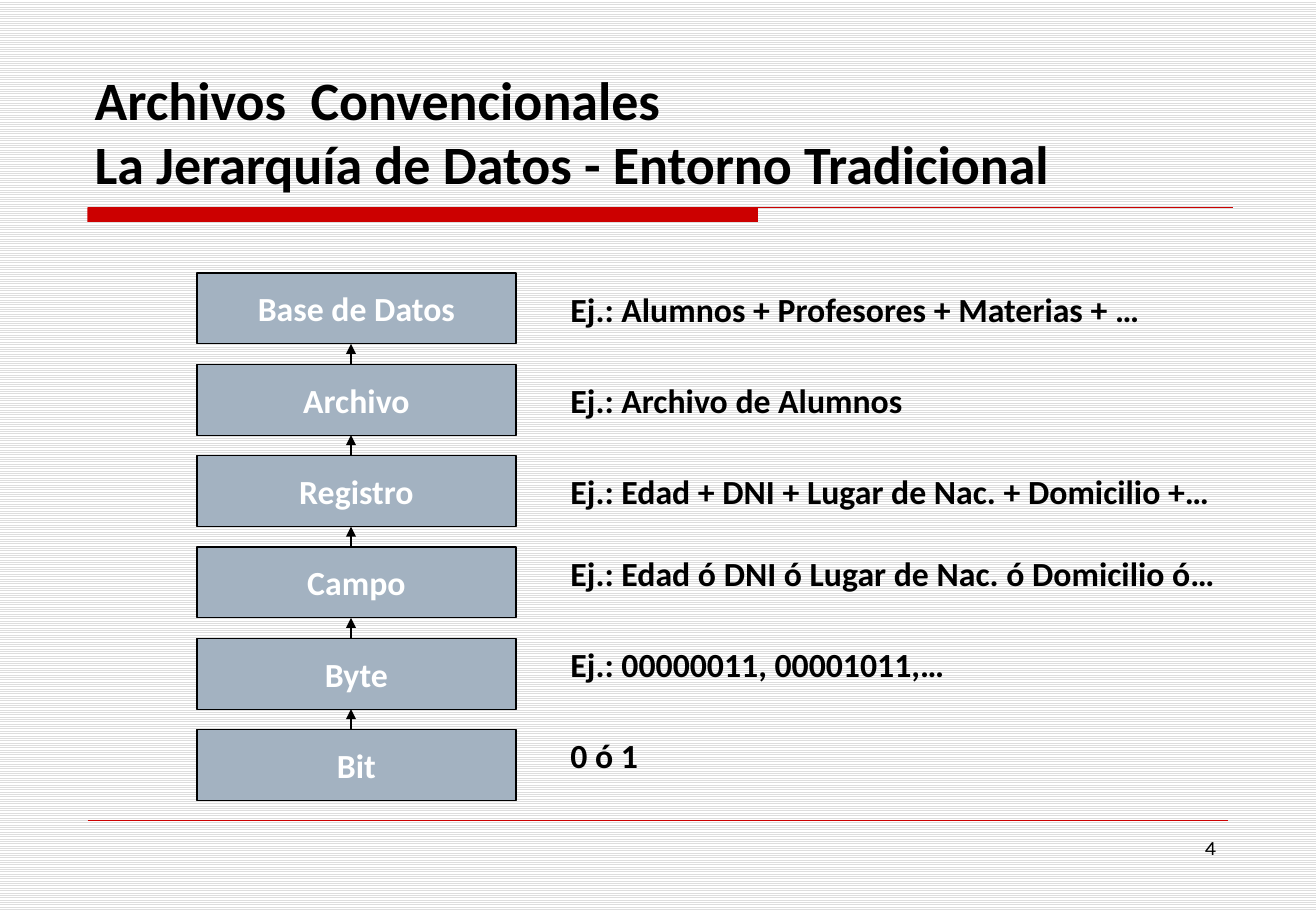
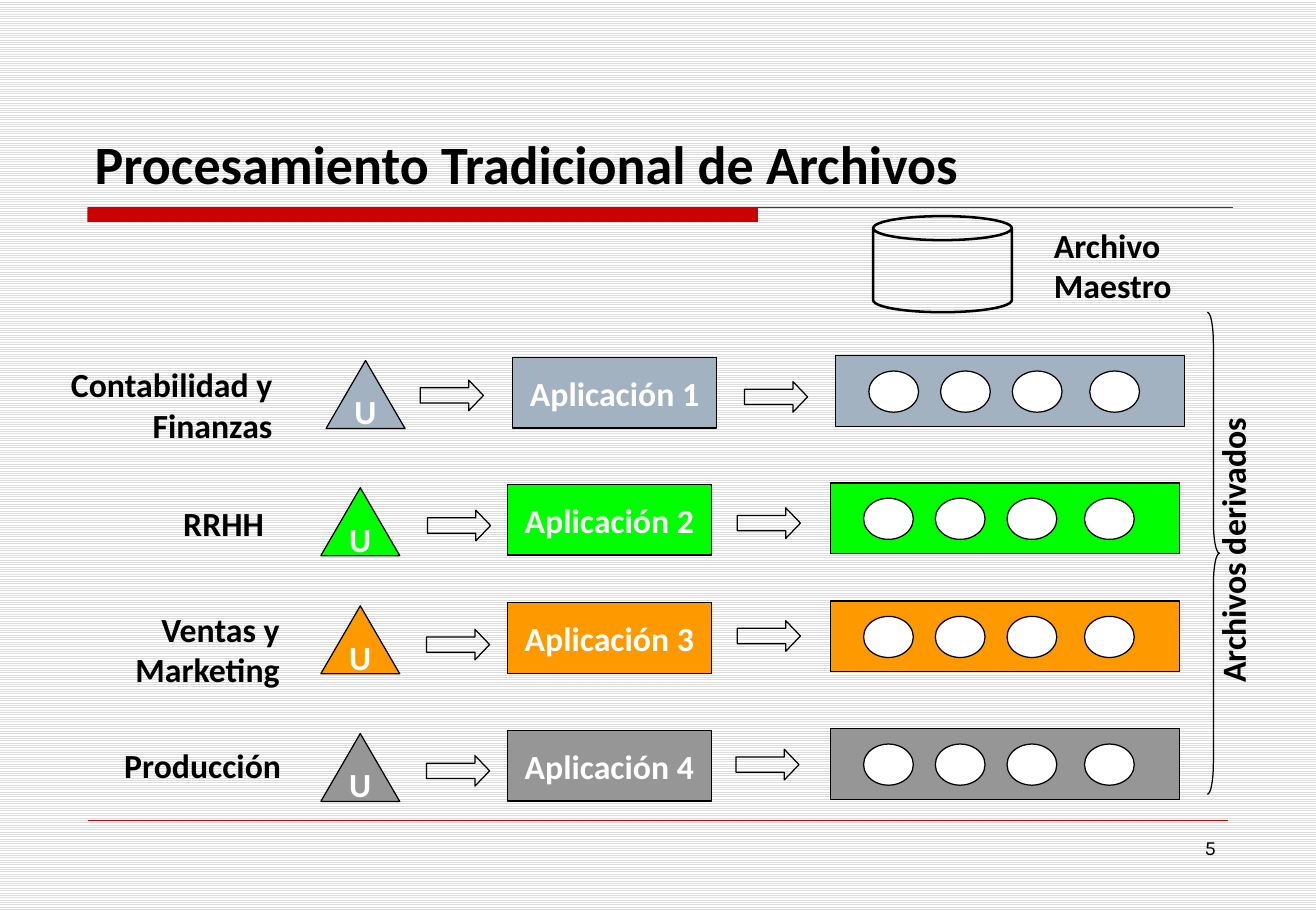
from lxml.etree import SubElement
from pptx import Presentation
from pptx.dml.color import RGBColor
from pptx.enum.dml import MSO_PATTERN
from pptx.enum.shapes import MSO_CONNECTOR, MSO_SHAPE
from pptx.enum.text import MSO_ANCHOR, PP_ALIGN
from pptx.oxml.ns import qn
from pptx.util import Cm, Pt

BLACK, WHITE, RED = "000000", "FFFFFF", "CC0000"
STRIPE, STEEL, GREEN, ORANGE, GRAY = "DDDDDD", "A3B2C1", "00FF00", "FF9900", "969696"


def color(code):
    return RGBColor.from_string(code)


class Builder:
    """Holds the deck style and the slide being drawn."""

    font = "Calibri"

    def __init__(self, deck):
        self.deck = deck
        self.page = None

    def new_page(self, title, number):
        self.page = self.deck.slides.add_slide(self.deck.slide_layouts[6])
        fill = self.page.background.fill
        fill.patterned()
        fill.pattern = MSO_PATTERN.LIGHT_HORIZONTAL
        fill.fore_color.rgb, fill.back_color.rgb = color(STRIPE), color(WHITE)
        # Title band and footer rule
        self.shape(MSO_SHAPE.RECTANGLE, 1.83, 4.34, 14.02, 0.3, RED, None)
        self.line(1.83, 4.34, 25.78, 4.34, RED)
        self.line(1.83, 17.15, 25.68, 17.15, RED, 0.25)
        # Title and page number
        self.text(title, 1.73, 0.84, 24.08, 3.38, size=32, anchor=MSO_ANCHOR.BOTTOM)
        self.text(str(number), 19.71, 17.35, 5.97, 1.32, size=12,
                  align=PP_ALIGN.RIGHT, font="Karla", bold=False)

    def fill_text(self, frame, text, size, code, align, font, bold):
        para = frame.paragraphs[0]
        para.text = text
        para.alignment = align
        para.font.name, para.font.size, para.font.bold = font, Pt(size), bold
        para.font.color.rgb = color(code)

    def text(self, text, left, top, width, height, size=20, align=PP_ALIGN.LEFT,
             anchor=MSO_ANCHOR.TOP, font=font, bold=True):
        box = self.page.shapes.add_textbox(Cm(left), Cm(top), Cm(width), Cm(height))
        box.text_frame.word_wrap = True
        box.text_frame.vertical_anchor = anchor
        self.fill_text(box.text_frame, text, size, BLACK, align, font, bold)
        return box

    def shape(self, kind, left, top, width, height, fill=None, line=BLACK,
              weight=0.75, text="", adjust=()):
        shape = self.page.shapes.add_shape(kind, Cm(left), Cm(top), Cm(width), Cm(height))
        shape.shadow.inherit = False
        for index, value in enumerate(adjust):
            shape.adjustments[index] = value
        if fill:
            shape.fill.solid()
            shape.fill.fore_color.rgb = color(fill)
        else:
            shape.fill.background()
        if line:
            shape.line.color.rgb = color(line)
            shape.line.width = Pt(weight)
        else:
            shape.line.fill.background()
        if text:
            shape.text_frame.word_wrap = False
            shape.text_frame.vertical_anchor = MSO_ANCHOR.MIDDLE
            self.fill_text(shape.text_frame, text, 20, WHITE, PP_ALIGN.CENTER, self.font, True)
        return shape

    def line(self, x1, y1, x2, y2, code=BLACK, weight=0.75, arrow=False):
        connector = self.page.shapes.add_connector(
            MSO_CONNECTOR.STRAIGHT, Cm(x1), Cm(y1), Cm(x2), Cm(y2))
        connector.line.color.rgb = color(code)
        connector.line.width = Pt(weight)
        properties = connector.element.spPr
        if arrow:
            SubElement(properties.find(qn("a:ln")), qn("a:tailEnd"), type="triangle")
        SubElement(properties, qn("a:effectLst"))


def draw_hierarchy(builder):
    builder.new_page("Archivos  Convencionales\nLa Jerarquía de Datos - Entorno Tradicional", 4)
    # Level name, example, example top, example width
    levels = [
        ("Base de Datos", "Ej.: Alumnos + Profesores + Materias + …", 5.92, 13.77),
        ("Archivo", "Ej.: Archivo de Alumnos", 7.82, 13.08),
        ("Registro", "Ej.: Edad + DNI + Lugar de Nac. + Domicilio +…", 9.73, 14.71),
        ("Campo", "Ej.: Edad ó DNI ó Lugar de Nac. ó Domicilio ó…", 11.43, 14.71),
        ("Byte", "Ej.: 00000011, 00001011,…", 13.34, 14.71),
        ("Bit", "0 ó 1", 15.24, 14.71),
    ]
    first_top, step, height = 5.71, 1.91, 1.48
    for index, (name, example, example_top, width) in enumerate(levels):
        top = first_top + index * step
        builder.shape(MSO_SHAPE.FLOWCHART_PROCESS, 4.12, top, 6.67, height, STEEL, text=name)
        builder.text(example, 11.68, example_top, width, 1.12)
        if index:
            builder.line(7.34, top, 7.34, top - step + height, arrow=True)


def draw_processing(builder):
    builder.new_page("Procesamiento Tradicional de Archivos", 5)
    # Department, fill, application corner, label box, arrow corners
    rows = [
        ("Contabilidad y Finanzas", STEEL, (10.72, 7.47), (0.18, 7.49, 5.77, 1.96),
         [(8.79, 7.95), (15.57, 7.98)]),
        ("RRHH", GREEN, (10.61, 10.13), (0, 10.39, 5.77, 1.12),
         [(8.94, 10.67), (15.42, 10.62)]),
        ("Ventas y Marketing", ORANGE, (10.61, 12.6), (0.33, 12.6, 5.77, 1.96),
         [(8.92, 13.16), (15.42, 12.98)]),
        ("Producción", GRAY, (10.61, 15.27), (0.36, 15.44, 5.77, 1.12),
         [(8.92, 15.8), (15.39, 15.67)]),
    ]
    for number, (department, fill, (left, top), label, arrows) in enumerate(rows, 1):
        builder.text(department, *label, align=PP_ALIGN.RIGHT)
        builder.shape(MSO_SHAPE.ISOSCELES_TRIANGLE, left - 3.9, top + 0.07, 1.65, 1.42,
                      fill, text="U")
        builder.shape(MSO_SHAPE.RECTANGLE, left, top, 4.27, 1.48, fill,
                      text=f"Aplicación {number}")
        builder.shape(MSO_SHAPE.RECTANGLE, left + 6.76, top - 0.03, 7.29, 1.48, fill)
        for offset in (7.45, 8.95, 10.45, 12.07):
            builder.shape(MSO_SHAPE.OVAL, left + offset, top + 0.29, 1.04, 0.86, WHITE)
        for arrow_left, arrow_top in arrows:
            builder.shape(MSO_SHAPE.RIGHT_ARROW, arrow_left, arrow_top, 1.32, 0.64,
                          adjust=(0.5, 0.48))
    # Master file
    builder.shape(MSO_SHAPE.CAN, 18.26, 4.52, 2.9, 2.01, weight=1.5, adjust=(0.25,))
    builder.text("Archivo Maestro", 21.79, 4.57, 4.01, 1.96)
    # Derived files
    builder.shape(MSO_SHAPE.RIGHT_BRACE, 25.25, 6.53, 0.25, 10.08, adjust=(2.61, 0.5))
    caption = builder.text("Archivos derivados", 22.66, 10.84, 6.25, 1.12)
    caption.rotation = -90


def main():
    deck = Presentation()
    deck.slide_width, deck.slide_height = Cm(27.52), Cm(19.05)
    builder = Builder(deck)
    draw_hierarchy(builder)
    draw_processing(builder)
    deck.save("out.pptx")


if __name__ == "__main__":
    main()
